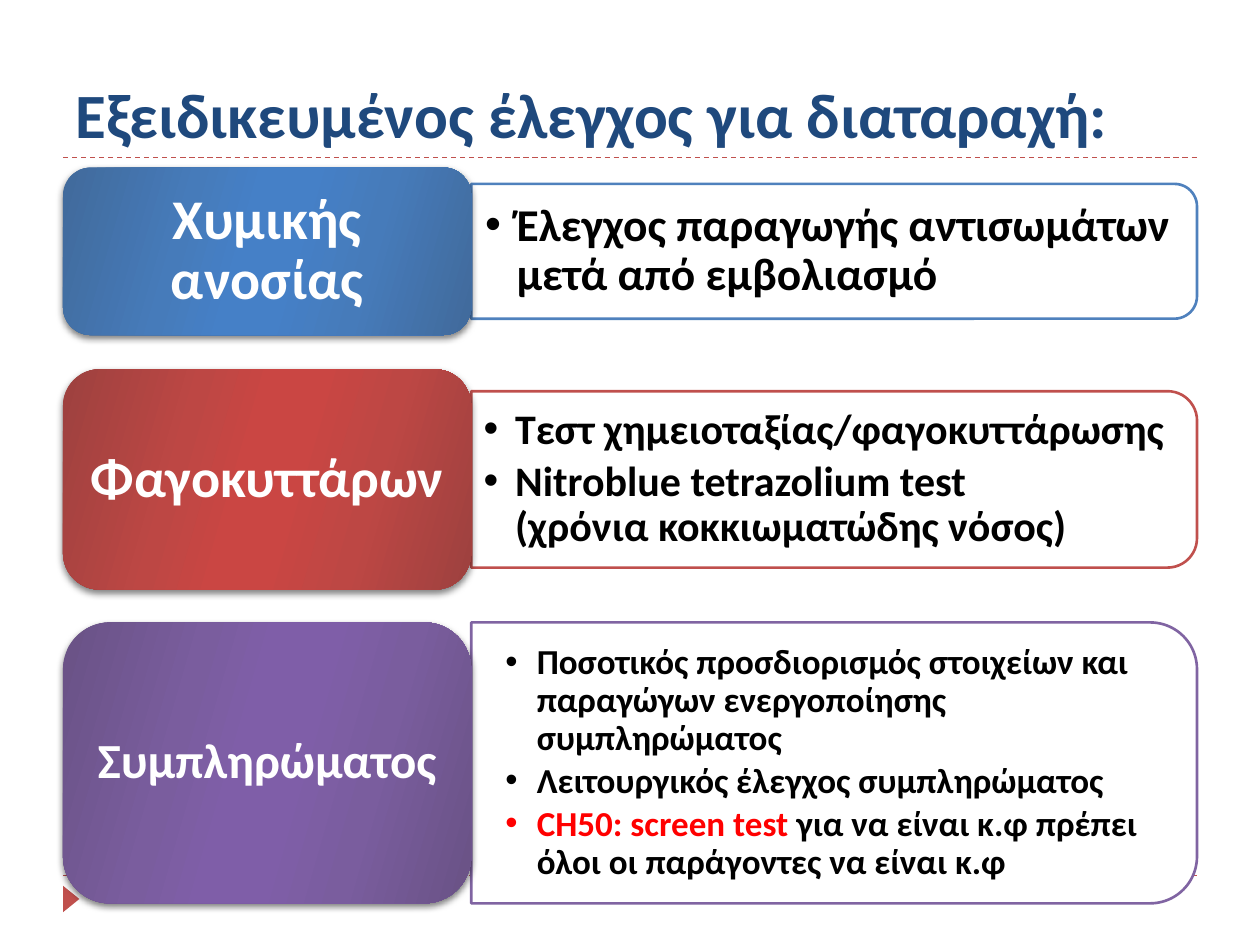
from lxml.etree import SubElement
from pptx import Presentation
from pptx.dml.color import RGBColor
from pptx.enum.dml import MSO_LINE
from pptx.enum.shapes import MSO_CONNECTOR, MSO_SHAPE
from pptx.enum.text import MSO_ANCHOR, MSO_AUTO_SIZE, PP_ALIGN
from pptx.oxml.ns import qn
from pptx.util import Inches, Pt

COLORS = {
    "title": "1F497D", "accent": "C0504D", "white": "FFFFFF",
    "black": "000000", "alert": "FF0000",
}
FONT = "Calibri"
LEFT, RIGHT = 0.5, 9.5
TILE_WIDTH = 3.24
PANEL_LEFT = LEFT + TILE_WIDTH
PANEL_WIDTH = RIGHT - PANEL_LEFT
CORNER_INSET = 0.05  # share of a box's height kept clear of its rounded corners

# Each bullet is a list of (text, colour) pieces; "\n" breaks the line.
TOPICS = [
    dict(label="Χυμικής ανοσίας", label_size=32, label_margins=(0.13, 0.07),
         top=1.33, height=1.33, panel_height=1.07,
         border="4F81BD", shades=("416A9B", "467BBA", "4580C7"),
         bullet_size=26, bullet_margins=(0.11, 0.05),
         bullets=[[("Έλεγχος παραγωγής αντισωμάτων μετά από εμβολιασμό", "black")]]),
    dict(label="Φαγοκυττάρων", label_size=31, label_margins=(0.13, 0.06),
         top=2.93, height=1.75, panel_height=1.4,
         border="C0504D", shades=("9D413F", "BD4744", "CA4643"),
         bullet_size=24, bullet_margins=(0.1, 0.05),
         bullets=[[("Τεστ χημειοταξίας/φαγοκυττάρωσης", "black")],
                  [("Nitroblue tetrazolium test\n(χρόνια κοκκιωματώδης νόσος)", "black")]]),
    dict(label="Συμπληρώματος", label_size=28, label_margins=(0.12, 0.06),
         top=4.94, height=2.23, panel_height=2.23,
         border="8064A2", shades=("695285", "7A5D9E", "7F5EA8"),
         bullet_size=20, bullet_margins=(0.27, 0.14),
         bullets=[[("Ποσοτικός προσδιορισμός στοιχείων και παραγώγων "
                    "ενεργοποίησης συμπληρώματος", "black")],
                  [("Λειτουργικός έλεγχος συμπληρώματος", "black")],
                  [("CH50: screen test ", "alert"),
                   ("για να είναι κ.φ πρέπει όλοι οι παράγοντες να είναι κ.φ", "black")]]),
]


def rgb(color):
    return RGBColor.from_string(COLORS.get(color, color))


def add_text(paragraph, text, size=20, color="black", bold=True):
    for index, line in enumerate(text.split("\n")):
        if index:
            paragraph.add_line_break()
        run = paragraph.add_run()
        run.text = line
        run.font.name, run.font.size, run.font.bold = FONT, Pt(size), bold
        run.font.color.rgb = rgb(color)


def space_paragraph(paragraph, after):
    """Tighten the lines and leave a gap of `after` percent of a line below."""
    paragraph.line_spacing = 0.9
    gap = SubElement(paragraph._p.get_or_add_pPr(), qn("a:spcAft"))
    SubElement(gap, qn("a:spcPct"), val=str(after * 1000))


def add_bullet(paragraph):
    properties = paragraph._p.get_or_add_pPr()
    properties.set("marL", str(Inches(0.25)))
    properties.set("indent", str(-Inches(0.25)))
    SubElement(properties, qn("a:buFont"), typeface="Arial")
    SubElement(properties, qn("a:buChar"), char="•")


def apply_gradient(shape, shades):
    """Run from the dark edge shade to the bright middle one and back."""
    edge, mid, bright = shades
    shape.fill.gradient()
    gradient = shape._element.spPr.find(qn("a:gradFill"))
    for child in list(gradient):
        gradient.remove(child)
    stops = SubElement(gradient, qn("a:gsLst"))
    for position, shade in zip((0, 30, 45, 55, 73, 100),
                               (edge, mid, bright, bright, mid, edge)):
        stop = SubElement(stops, qn("a:gs"), pos=str(position * 1000))
        SubElement(stop, qn("a:srgbClr"), val=shade)
    SubElement(gradient, qn("a:lin"), ang=str(16 * 60000), scaled="0")


def apply_shadow(shape):
    effects = shape._element.spPr.find(qn("a:effectLst"))
    shadow = SubElement(effects, qn("a:outerShdw"), blurRad=str(Pt(4)), dist=str(Pt(2)),
                        dir=str(90 * 60000), rotWithShape="0")
    shade = SubElement(shadow, qn("a:srgbClr"), val=COLORS["black"])
    SubElement(shade, qn("a:alpha"), val="50000")


class SlideBuilder:
    def __init__(self, slide):
        self.slide = slide
        self.shapes = slide.shapes

    def title(self, text):
        heading = self.shapes.title
        heading.left, heading.top = Inches(LEFT), Inches(0.17)
        heading.width, heading.height = Inches(RIGHT - LEFT), Inches(1.08)
        frame = heading.text_frame
        frame.auto_size = MSO_AUTO_SIZE.NONE
        frame.vertical_anchor = MSO_ANCHOR.BOTTOM
        frame.paragraphs[0].alignment = PP_ALIGN.LEFT
        add_text(frame.paragraphs[0], text, size=36, color="title")

    def rule(self, y):
        line = self.shapes.add_connector(
            MSO_CONNECTOR.STRAIGHT, Inches(LEFT), Inches(y), Inches(RIGHT), Inches(y))
        line.line.color.rgb = rgb("accent")
        line.line.width = Pt(0.75)
        line.line.dash_style = MSO_LINE.DASH
        SubElement(line._element.spPr, qn("a:effectLst"))

    def shape(self, kind, left, top, width, height, fill=None, border=None, rotation=0):
        shape = self.shapes.add_shape(
            kind, Inches(left), Inches(top), Inches(width), Inches(height))
        shape.rotation = rotation
        shape.shadow.inherit = False
        if fill:
            shape.fill.solid()
            shape.fill.fore_color.rgb = rgb(fill)
        if border:
            shape.line.color.rgb = rgb(border)
            shape.line.width = Pt(1.5)
        else:
            shape.line.fill.background()
        return shape

    def frame(self, left, top, width, height, margins):
        box = self.shapes.add_textbox(
            Inches(left), Inches(top), Inches(width), Inches(height))
        frame = box.text_frame
        frame.word_wrap = True
        frame.vertical_anchor = MSO_ANCHOR.MIDDLE
        frame.margin_left = frame.margin_right = Inches(margins[0])
        frame.margin_top = frame.margin_bottom = Inches(margins[1])
        return frame

    def panel(self, topic):
        """Draw the outlined box, a top-rounded shape turned a quarter, and its list."""
        height = topic["panel_height"]
        middle = topic["top"] + topic["height"] / 2
        self.shape(MSO_SHAPE.ROUND_2_SAME_RECTANGLE,
                   PANEL_LEFT + (PANEL_WIDTH - height) / 2, middle - PANEL_WIDTH / 2,
                   height, PANEL_WIDTH, fill="white", border=topic["border"], rotation=90)
        inset = height * CORNER_INSET
        frame = self.frame(PANEL_LEFT, middle - height / 2 + inset, PANEL_WIDTH - inset,
                           height - 2 * inset, topic["bullet_margins"])
        for index, pieces in enumerate(topic["bullets"]):
            paragraph = frame.add_paragraph() if index else frame.paragraphs[0]
            space_paragraph(paragraph, after=15)
            add_bullet(paragraph)
            for text, color in pieces:
                add_text(paragraph, text, size=topic["bullet_size"], color=color)

    def tile(self, topic):
        top, height = topic["top"], topic["height"]
        tile = self.shape(MSO_SHAPE.ROUNDED_RECTANGLE, LEFT, top, TILE_WIDTH, height)
        apply_gradient(tile, topic["shades"])
        apply_shadow(tile)
        inset = height * CORNER_INSET
        frame = self.frame(LEFT + inset, top + inset, TILE_WIDTH - 2 * inset,
                           height - 2 * inset, topic["label_margins"])
        label = frame.paragraphs[0]
        label.alignment = PP_ALIGN.CENTER
        space_paragraph(label, after=35)
        add_text(label, topic["label"], size=topic["label_size"], color="white")


def main():
    deck = Presentation()
    deck.slide_width, deck.slide_height = Inches(10), Inches(7.5)
    builder = SlideBuilder(deck.slides.add_slide(deck.slide_layouts[5]))
    for y in (6.95, 1.25):
        builder.rule(y)
    builder.shape(MSO_SHAPE.ISOSCELES_TRIANGLE, 0.46, 7.07, 0.21, 0.13,
                  fill="accent", rotation=90)
    builder.title("Εξειδικευμένος έλεγχος για διαταραχή:")
    for topic in TOPICS:
        builder.panel(topic)
        builder.tile(topic)
    deck.save("out.pptx")


if __name__ == "__main__":
    main()
